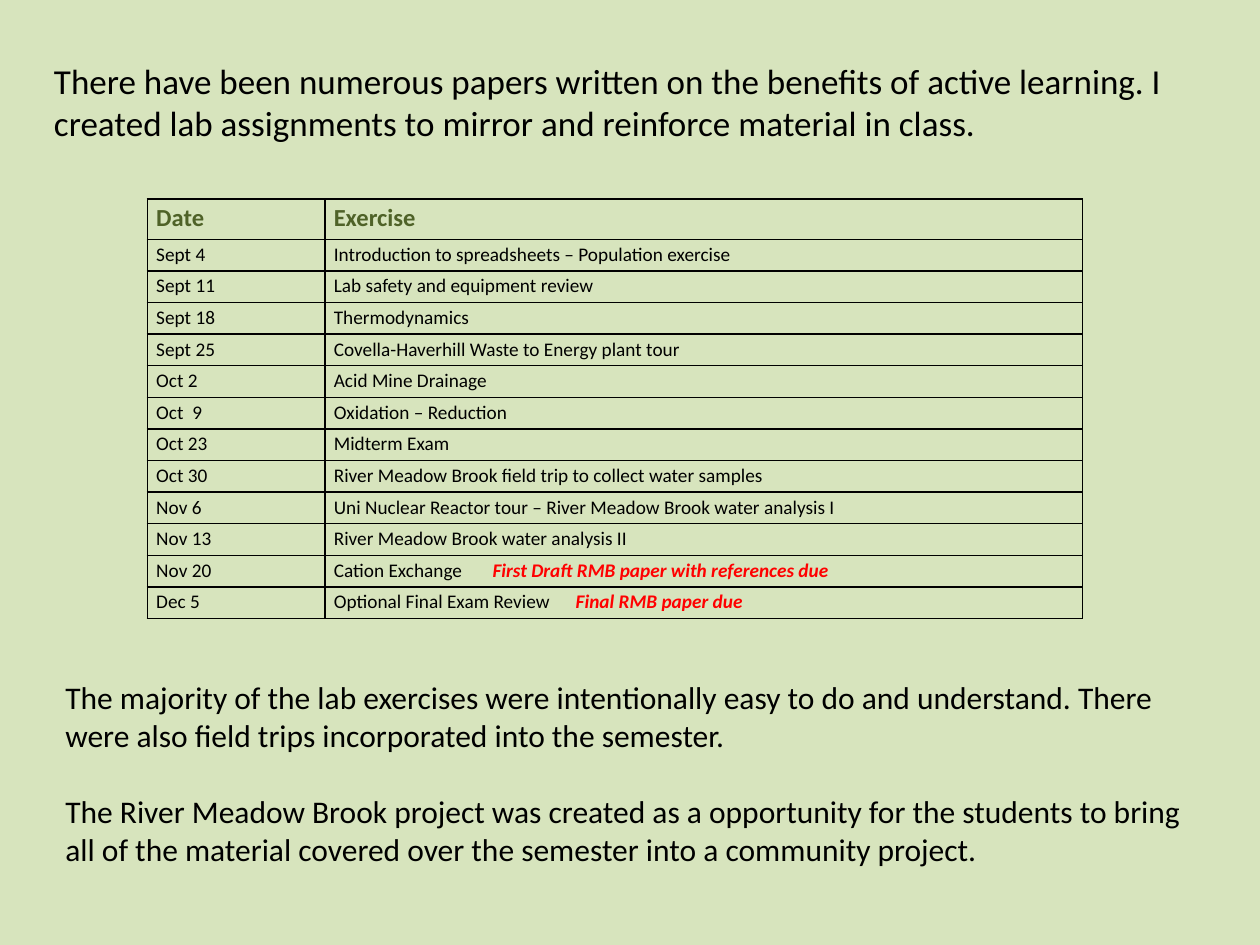
from dataclasses import dataclass

from lxml import etree
from pptx import Presentation
from pptx.dml.color import RGBColor
from pptx.enum.text import MSO_ANCHOR
from pptx.oxml.ns import qn
from pptx.util import Emu, Inches, Pt

TOP = MSO_ANCHOR.TOP
FONT = "Calibri"
PAGE_WIDTH, PAGE_HEIGHT = Inches(10), Inches(7.5)
BACKGROUND, BLACK, OLIVE, RED = "D7E4BD", "000000", "4F6228", "FF0000"


@dataclass
class Area:
    """A rectangle in inches, out of a page of 10 by 7.5."""
    left: float
    top: float
    width: float
    height: float

    def lengths(self) -> list[Emu]:
        return [Inches(n) for n in (self.left, self.top, self.width, self.height)]


@dataclass
class Style:
    size: float
    color: str = BLACK
    bold: bool = False
    italic: bool = False


@dataclass
class Lab:
    date: str
    exercise: str
    due: str = ""
    due_tab: float = 0


HEADER = Style(14, OLIVE, bold=True)
BODY = Style(11)
DUE = Style(11, RED, bold=True, italic=True)

LABS = [
    Lab("Sept 4", "Introduction to spreadsheets – Population exercise"),
    Lab("Sept 11", "Lab safety and equipment review"),
    Lab("Sept 18", "Thermodynamics"),
    Lab("Sept 25", "Covella-Haverhill Waste to Energy plant tour"),
    Lab("Oct 2", "Acid Mine Drainage"),
    Lab("Oct  9", "Oxidation – Reduction"),
    Lab("Oct 23", "Midterm Exam"),
    Lab("Oct 30", "River Meadow Brook field trip to collect water samples"),
    Lab("Nov 6", "Uni Nuclear Reactor tour – River Meadow Brook water analysis I"),
    Lab("Nov 13", "River Meadow Brook water analysis II"),
    Lab("Nov 20", "Cation Exchange", "First Draft RMB paper with references due", 1.26),
    Lab("Dec 5", "Optional Final Exam Review", "Final RMB paper due", 1.92),
]

INTRO = ["There have been numerous papers written on the benefits of active learning. "
         "I created lab assignments to mirror and reinforce material in class."]
SUMMARY = ["The majority of the lab exercises were intentionally easy to do and understand. "
           "There were also field trips incorporated into the semester.",
           "The River Meadow Brook project was created as a opportunity for the students to "
           "bring all of the material covered over the semester into a community project."]

TABLE_AREA = Area(1.17, 1.58, 7.42, 3.33)
DATE_SHARE = 0.19
HEADER_HEIGHT = 0.32


def color(code: str) -> RGBColor:
    return RGBColor.from_string(code)


def add_span(para, text: str, style: Style) -> None:
    span = para.add_run()
    span.text = text
    formats = {"name": FONT, "size": Pt(style.size),
               "bold": style.bold, "italic": style.italic}
    for name, value in formats.items():
        setattr(span.font, name, value)
    span.font.color.rgb = color(style.color)


def add_text(page, area: Area, texts: list[str], style: Style, gap: float = 0) -> None:
    frame = page.shapes.add_textbox(*area.lengths()).text_frame
    frame.word_wrap = True
    for index, text in enumerate(texts):
        para = frame.add_paragraph() if index else frame.paragraphs[0]
        para.space_before = Pt(gap if index else 0)
        add_span(para, text, style)


def add_borders(cell) -> None:
    """Put a thin black line on all four sides, ahead of the fill."""
    properties = cell._tc.get_or_add_tcPr()
    for index, side in enumerate(("lnL", "lnR", "lnT", "lnB")):
        line = etree.Element(qn(f"a:{side}"), w=str(Pt(1)))
        fill = etree.SubElement(line, qn("a:solidFill"))
        etree.SubElement(fill, qn("a:srgbClr"), val=BLACK)
        properties.insert(index, line)


def add_tab_stop(para, position: float) -> None:
    stops = etree.SubElement(para._p.get_or_add_pPr(), qn("a:tabLst"))
    etree.SubElement(stops, qn("a:tab"), pos=str(Inches(position)), algn="l")


def fill_cell(cell, text: str, style: Style):
    formats = {"margin_left": Inches(0.07), "margin_right": Inches(0.07),
               "margin_top": 0, "margin_bottom": 0, "vertical_anchor": TOP}
    for name, value in formats.items():
        setattr(cell, name, value)
    cell.fill.background()
    add_borders(cell)
    para = cell.text_frame.paragraphs[0]
    para.line_spacing = 1.15
    add_span(para, text, style)
    return para


def add_schedule(page, area: Area, labs: list[Lab]) -> None:
    table = page.shapes.add_table(len(labs) + 1, 2, *area.lengths()).table
    table.horz_banding = False
    for column, share in zip(table.columns, (DATE_SHARE, 1 - DATE_SHARE)):
        column.width = Inches(area.width * share)
    row_height = (area.height - HEADER_HEIGHT) / len(labs)

    for number, lab in enumerate([Lab("Date", "Exercise"), *labs]):
        table.rows[number].height = Inches(row_height if number else HEADER_HEIGHT)
        style = BODY if number else HEADER
        fill_cell(table.cell(number, 0), lab.date, style)
        para = fill_cell(table.cell(number, 1), lab.exercise, style)
        if lab.due:
            add_tab_stop(para, lab.due_tab)
            add_span(para, "\t" + lab.due, DUE)


def main() -> None:
    deck = Presentation()
    deck.slide_width, deck.slide_height = PAGE_WIDTH, PAGE_HEIGHT
    page = deck.slides.add_slide(deck.slide_layouts[6])
    page.background.fill.solid()
    page.background.fill.fore_color.rgb = color(BACKGROUND)

    # Introduction, lab schedule, closing remarks
    add_text(page, Area(0.33, 0.42, 9.25, 0.77), INTRO, Style(20))
    add_schedule(page, TABLE_AREA, LABS)
    add_text(page, Area(0.42, 5.33, 9.08, 1.62), SUMMARY, Style(18), gap=22)

    deck.save("out.pptx")


if __name__ == "__main__":
    main()
